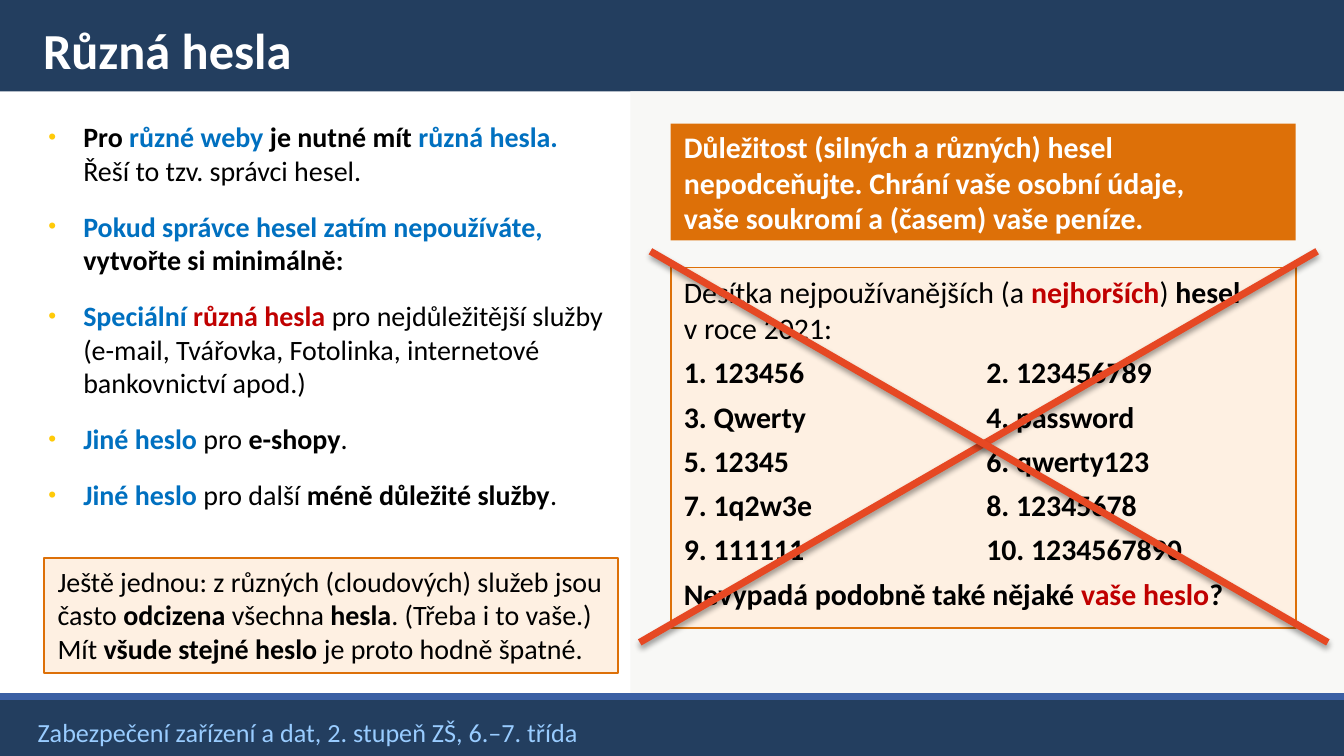
from typing import NamedTuple

from lxml.etree import SubElement
from pptx import Presentation
from pptx.dml.color import RGBColor
from pptx.enum.shapes import MSO_CONNECTOR, MSO_SHAPE
from pptx.enum.text import MSO_ANCHOR, MSO_AUTO_SIZE, PP_ALIGN
from pptx.oxml.ns import qn
from pptx.util import Pt

PX = 9144  # EMU per px, 100 px to the inch
WIDTH = 1000
FONT = "Calibri"
HARD_SPACE = chr(160)  # keeps a one-letter preposition with the next word
COLORS = {
    "navy": "233E5F", "rule": "3A5FA3", "sky": "99CCFF", "panel": "F8F8F6",
    "orange": "DD7008", "cream": "FEF0E2", "cross": "E64823", "bullet": "FFCA08",
    "black": "000000", "white": "FFFFFF", "blue": "0070C0", "red": "C00000",
}


class Area(NamedTuple):
    left: int
    top: int
    width: int
    height: int


class Span(NamedTuple):
    text: str
    color: str = "black"
    bold: bool = False


class Style(NamedTuple):
    size: int
    space: float = 0
    anchor: MSO_ANCHOR = MSO_ANCHOR.TOP
    insets: tuple[int, int, int, int] = (10, 5, 10, 5)
    bulleted: bool = False
    tab_stops: tuple[int, ...] = ()
    fit: MSO_AUTO_SIZE = MSO_AUTO_SIZE.NONE


def bold(text: str, color: str = "black") -> Span:
    return Span(text, color, True)


def rgb(name: str) -> RGBColor:
    return RGBColor.from_string(COLORS[name])


def set_values(target, values: dict) -> None:
    for name, value in values.items():
        setattr(target, name, value)


def place(shape, area: Area) -> None:
    set_values(shape, {name: value * PX for name, value in area._asdict().items()})


def add_bullet(para) -> None:
    props = para._p.get_or_add_pPr()
    props.set("marL", str(36 * PX))
    props.set("indent", str(-26 * PX))
    color = SubElement(props, qn("a:buClr"))
    SubElement(color, qn("a:srgbClr"), val=COLORS["bullet"])
    SubElement(props, qn("a:buSzPct"), val="80000")
    SubElement(props, qn("a:buFont"), typeface="Arial")
    SubElement(props, qn("a:buChar"), char="•")


def add_tabs(para, stops: tuple[int, ...]) -> None:
    tabs = SubElement(para._p.get_or_add_pPr(), qn("a:tabLst"))
    for stop in stops:
        SubElement(tabs, qn("a:tab"), pos=str(stop * PX), algn="l")


def write(shape, paragraphs: list[list[Span]], style: Style) -> None:
    frame = shape.text_frame
    sides = ("margin_left", "margin_top", "margin_right", "margin_bottom")
    set_values(frame, {
        "word_wrap": True, "auto_size": style.fit, "vertical_anchor": style.anchor,
        **{side: inset * PX for side, inset in zip(sides, style.insets)},
    })
    for index, spans in enumerate(paragraphs):
        para = frame.add_paragraph() if index else frame.paragraphs[0]
        if style.bulleted:
            add_bullet(para)
        if style.tab_stops:
            add_tabs(para, style.tab_stops)
        set_values(para, {
            "alignment": PP_ALIGN.LEFT,
            "space_before": Pt(style.space if index else 0),
        })
        for span in spans:
            for number, line in enumerate(span.text.split("\n")):
                if number:
                    para.add_line_break()
                if line:
                    run = para.add_run()
                    run.text = line
                    set_values(run.font, {
                        "name": FONT, "size": Pt(style.size), "bold": span.bold,
                    })
                    run.font.color.rgb = rgb(span.color)


def add_box(page, area: Area, fill: str, outline: str | None = None):
    box = page.shapes.add_shape(MSO_SHAPE.RECTANGLE, *(value * PX for value in area))
    box.shadow.inherit = False
    box.fill.solid()
    box.fill.fore_color.rgb = rgb(fill)
    if outline:
        box.line.color.rgb = rgb(outline)
        box.line.width = Pt(1)
    else:
        box.line.fill.background()
    return box


def add_line(page, ends: tuple[int, int, int, int], color: str, shadow: bool = False) -> None:
    line = page.shapes.add_connector(MSO_CONNECTOR.STRAIGHT, *(value * PX for value in ends))
    line.line.color.rgb = rgb(color)
    line.line.width = Pt(3.8)
    effects = SubElement(line._element.spPr, qn("a:effectLst"))
    if shadow:
        outer = SubElement(effects, qn("a:outerShdw"), blurRad="39400", dist="25400",
                           dir="5400000", rotWithShape="0")
        tint = SubElement(outer, qn("a:srgbClr"), val=COLORS["black"])
        SubElement(tint, qn("a:alpha"), val="38000")


ADVICE = [
    [bold("Pro "), bold("různé weby ", "blue"), bold("je nutné mít "),
     bold("různá hesla. \n", "blue"), Span("Řeší to tzv. správci hesel.")],
    [bold("Pokud správce hesel zatím nepoužíváte, ", "blue"), bold("vytvořte si minimálně:")],
    [bold("Speciální ", "blue"), bold("různá hesla ", "red"),
     Span("pro nejdůležitější služby (e-mail, Tvářovka, Fotolinka, internetové "
          "bankovnictví apod.)")],
    [bold("Jiné heslo ", "blue"), Span("pro "), bold("e-shopy"), Span(".")],
    [bold("Jiné heslo ", "blue"), Span("pro další "), bold("méně důležité služby"), Span(".")],
]
WARNING = [[bold("Důležitost (silných a různých) hesel nepodceňujte. Chrání vaše osobní údaje, "
                 f"vaše{HARD_SPACE}soukromí a (časem) vaše peníze.", "white")]]
PASSWORDS = ["123456", "123456789", "Qwerty", "password", "12345", "qwerty123",
             "1q2w3e", "12345678", "111111", "1234567890"]
WORST = [
    [Span("Desítka nejpoužívanějších (a "), bold("nejhorších", "red"), Span(") "),
     bold("hesel"), Span(f" v{HARD_SPACE}roce 2021:")],
    *([bold(f"{rank}. {PASSWORDS[rank - 1]}\t\t{rank + 1}. {PASSWORDS[rank]}")]
      for rank in range(1, len(PASSWORDS), 2)),
    [bold("Nevypadá podobně také nějaké "), bold("vaše heslo", "red"), bold("?")],
]
REMINDER = [[
    Span("Ještě jednou: z různých (cloudových) služeb jsou často "), bold("odcizena"),
    Span(" všechna "), bold("hesla"), Span(". (Třeba i to vaše.) Mít "),
    bold("všude stejné heslo "), Span("je proto hodně špatné."),
]]
FOOTER = [[Span("Zabezpečení zařízení a dat, 2. stupeň ZŠ, 6.–7. třída", "sky")]]


def main() -> None:
    deck = Presentation()
    set_values(deck, {"slide_width": WIDTH * PX, "slide_height": WIDTH * PX * 9 // 16})
    page = deck.slides.add_slide(deck.slide_layouts[1])
    title, body = page.placeholders
    middle, grow = MSO_ANCHOR.MIDDLE, MSO_AUTO_SIZE.SHAPE_TO_FIT_TEXT

    add_box(page, Area(0, 519, WIDTH, 44), "navy")
    add_box(page, Area(0, 0, WIDTH, 68), "navy")
    footer = page.shapes.add_textbox(*(value * PX for value in (22, 527, 862, 36)))
    write(footer, FOOTER, Style(14, anchor=middle, insets=(6, 5, 3, 5)))
    add_box(page, Area(469, 68, 531, 450), "panel")

    for placeholder in (title, body):  # bring the text in front of the bands
        page.shapes.element.append(placeholder.element)
    place(title, Area(22, 6, 956, 62))
    write(title, [[bold("Různá hesla", "white")]],
          Style(27, anchor=middle, insets=(10, 5, 5, 5)))
    place(body, Area(20, 79, 449, 438))
    write(body, ADVICE, Style(15, 12, insets=(6, 10, 10, 5), bulleted=True))

    add_line(page, (0, 518, WIDTH, 518), "rule")
    warning = add_box(page, Area(499, 92, 465, 87), "orange")
    write(warning, WARNING, Style(16, anchor=middle))
    worst = add_box(page, Area(499, 199, 465, 268), "cream", "orange")
    write(worst, WORST, Style(16, 4.5, tab_stops=(150, 225), fit=grow))
    reminder = add_box(page, Area(33, 415, 427, 86), "cream", "orange")
    write(reminder, REMINDER, Style(15, fit=grow))

    for start, end in ((476, 980), (988, 484)):
        add_line(page, (start, 478, end, 187), "cross", shadow=True)
    deck.save("out.pptx")


if __name__ == "__main__":
    main()
